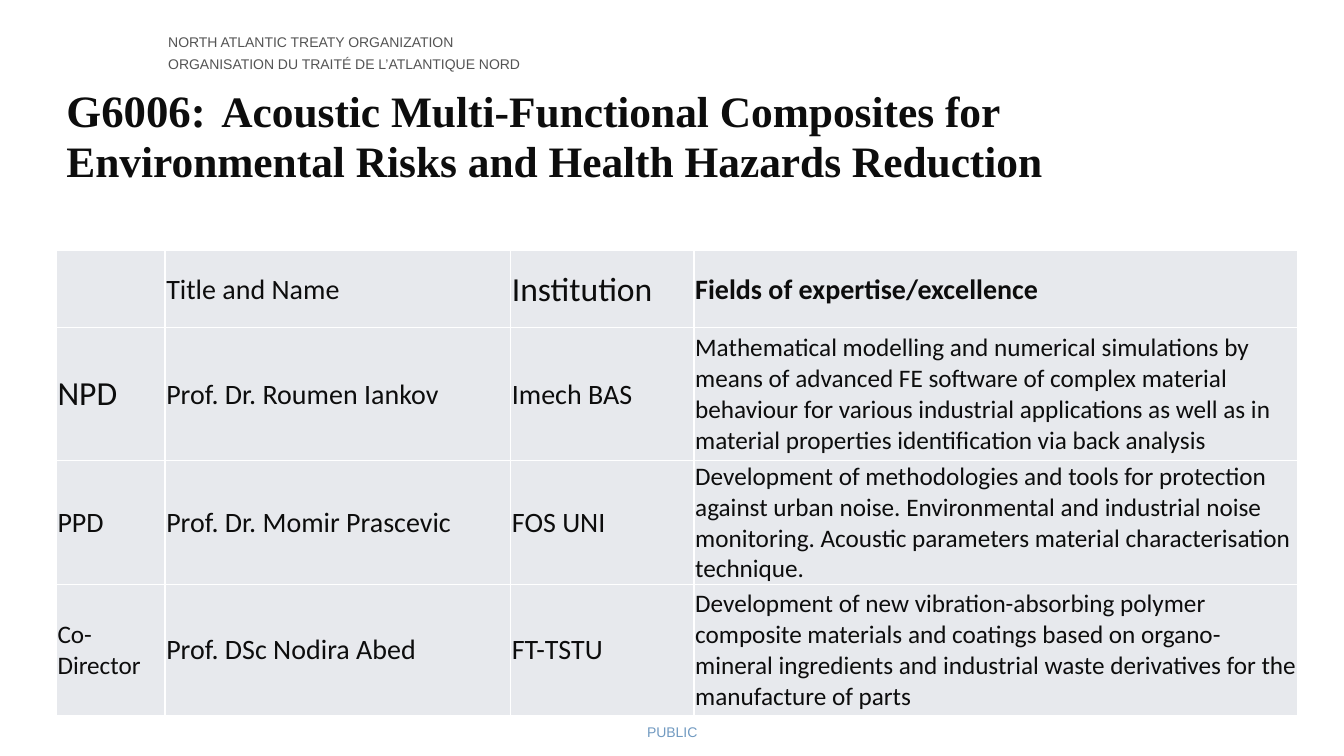
from typing import NamedTuple

from lxml.etree import SubElement
from pptx import Presentation
from pptx.dml.color import RGBColor as Rgb
from pptx.enum.text import MSO_ANCHOR as Anchor, MSO_AUTO_SIZE as AutoSize, PP_ALIGN as Align
from pptx.oxml.ns import qn
from pptx.util import Cm, Pt

COLORS = {"ink": "0D0D0D", "grey": "545454", "blue": "719AC1", "cell": "E7E9ED", "rule": "FFFFFF"}
COLUMN_WIDTHS = (2.74, 8.71, 4.62, 15.21)
ROW_HEIGHTS = (1.93, 3.35, 3.12, 3.3)


class Entry(NamedTuple):
    text: str
    size: float = 20
    bold: bool = False


class Label(NamedTuple):
    lines: tuple[str, ...]
    box: tuple[float, float, float, float]
    color: str
    align: Align
    spacing: float


LABELS = (
    Label(("NORTH ATLANTIC TREATY ORGANIZATION", "ORGANISATION DU TRAITÉ DE L’ATLANTIQUE NORD"),
          (3.99, 0.51, 15.01, 1.5), "grey", Align.LEFT, 1.3),
    Label(("PUBLIC",), (0.53, 17.93, 32.82, 1.02), "blue", Align.CENTER, 1),
)
TITLE = (
    Entry("G6006:", 32, True),
    Entry(" ", 44, True),
    Entry("Acoustic Multi-Functional Composites for Environmental Risks and Health Hazards Reduction",
          31, True),
)
TEAM = (
    (Entry(""), Entry("Title and Name"), Entry("Institution", 24),
     Entry("Fields of expertise/excellence", 20, True)),
    (Entry("NPD", 24), Entry("Prof. Dr. Roumen Iankov"), Entry("Imech BAS"),
     Entry("Mathematical modelling and numerical simulations by means of advanced FE software of "
           "complex material behaviour for various industrial applications as well as in material "
           "properties identification via back analysis", 18)),
    (Entry("PPD"), Entry("Prof. Dr. Momir Prascevic"), Entry("FOS UNI"),
     Entry("Development of methodologies and tools for protection against urban noise. "
           "Environmental and industrial noise monitoring. Acoustic parameters material "
           "characterisation technique.", 18)),
    (Entry("Co-Director", 18), Entry("Prof. DSc Nodira Abed"), Entry("FT-TSTU"),
     Entry("Development of new vibration-absorbing polymer composite materials and coatings based "
           "on organo-mineral ingredients and industrial waste derivatives for the manufacture "
           "of parts", 18)),
)


def apply(target, formats: dict) -> None:
    for name, value in formats.items():
        setattr(target, name, value)


def add_entry(paragraph, entry: Entry, font: str, color: str = "ink") -> None:
    run = paragraph.add_run()
    run.text = entry.text
    apply(run.font, {"name": font, "size": Pt(entry.size), "bold": entry.bold})
    run.font.color.rgb = Rgb.from_string(COLORS[color])


def add_label(slide, label: Label) -> None:
    frame = slide.shapes.add_textbox(*map(Cm, label.box)).text_frame
    apply(frame, {"word_wrap": True, "vertical_anchor": Anchor.MIDDLE})
    paragraph = frame.paragraphs[0]
    apply(paragraph, {"alignment": label.align, "line_spacing": label.spacing})
    for index, line in enumerate(label.lines):
        if index:
            paragraph.add_line_break()
        add_entry(paragraph, Entry(line, 10), "Arial", label.color)


def fill_title(title) -> None:
    apply(title, {"left": Cm(1.42), "top": Cm(1.45), "width": Cm(29.21), "height": Cm(3.68)})
    frame = title.text_frame
    apply(frame, {"word_wrap": True, "auto_size": AutoSize.NONE, "vertical_anchor": Anchor.MIDDLE})
    paragraph = frame.paragraphs[0]
    apply(paragraph, {"alignment": Align.LEFT, "line_spacing": 0.9})
    for entry in TITLE:
        add_entry(paragraph, entry, "Times New Roman")


def add_borders(cell) -> None:
    properties = cell._tc.get_or_add_tcPr()
    for side in ("a:lnL", "a:lnR", "a:lnT", "a:lnB"):
        line = SubElement(properties, qn(side), w=str(Pt(1)))
        SubElement(SubElement(line, qn("a:solidFill")), qn("a:srgbClr"), val=COLORS["rule"])


def fill_cell(cell, entry: Entry) -> None:
    margin = Cm(0.03)
    apply(cell, {"margin_left": margin, "margin_right": margin, "margin_top": margin,
                 "margin_bottom": 0, "vertical_anchor": Anchor.MIDDLE})
    add_borders(cell)
    cell.fill.solid()
    cell.fill.fore_color.rgb = Rgb.from_string(COLORS["cell"])
    if entry.text:
        add_entry(cell.text_frame.paragraphs[0], entry, "Calibri")


def add_team_table(slide) -> None:
    table = slide.shapes.add_table(
        len(ROW_HEIGHTS), len(COLUMN_WIDTHS), Cm(1.42), Cm(6.32),
        Cm(sum(COLUMN_WIDTHS)), Cm(sum(ROW_HEIGHTS))).table
    apply(table, {"first_row": False, "horz_banding": False})
    for column, width in zip(table.columns, COLUMN_WIDTHS):
        column.width = Cm(width)
    for row, height, entries in zip(table.rows, ROW_HEIGHTS, TEAM):
        row.height = Cm(height)
        for cell, entry in zip(row.cells, entries):
            fill_cell(cell, entry)


def main() -> None:
    deck = Presentation()
    apply(deck, {"slide_width": Cm(33.87), "slide_height": Cm(19.05)})
    slide = deck.slides.add_slide(deck.slide_layouts[5])
    fill_title(slide.shapes.title)
    for label in LABELS:
        add_label(slide, label)
    add_team_table(slide)
    deck.save("out.pptx")


if __name__ == "__main__":
    main()
